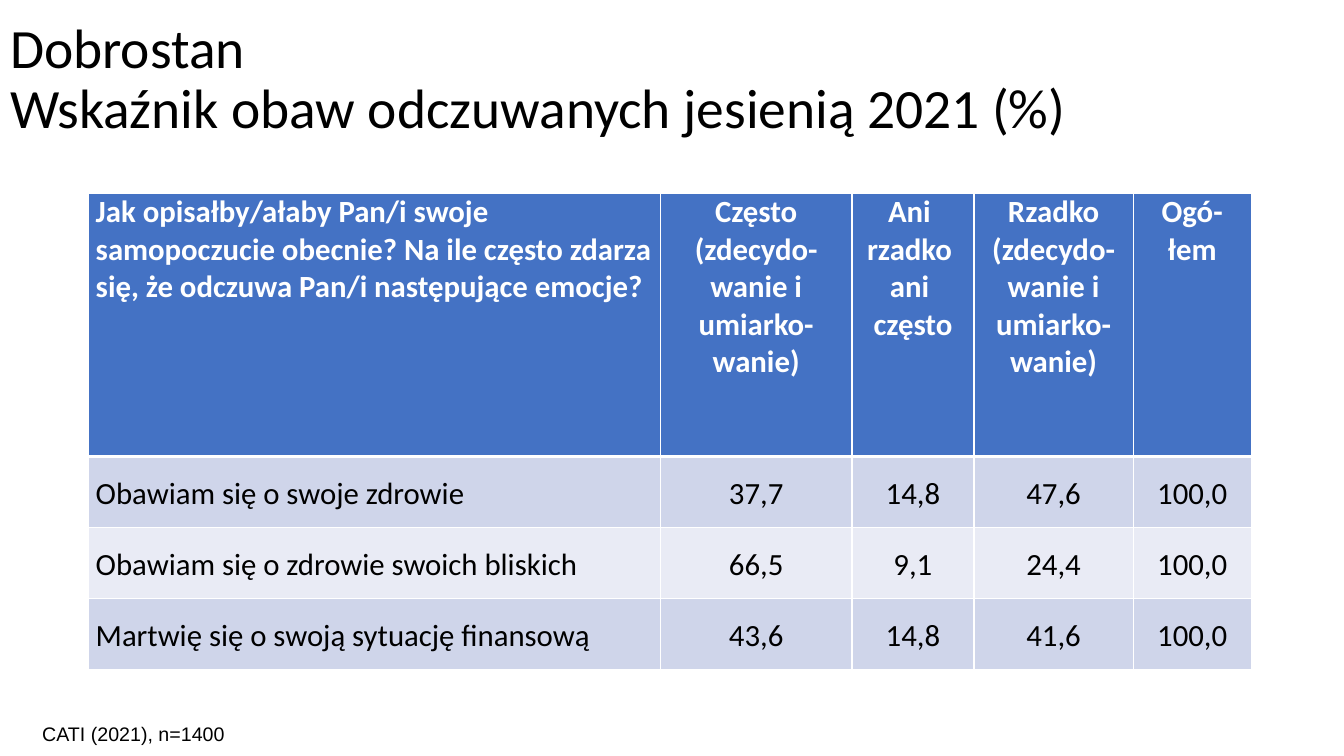
from dataclasses import dataclass

from lxml import etree
from pptx import Presentation
from pptx import util as u
from pptx.dml.color import RGBColor
from pptx.enum import text as t
from pptx.oxml import ns

PX = 9144  # EMU in one px, 100 px to the inch

BLACK = RGBColor(0, 0, 0)
WHITE = RGBColor(255, 255, 255)
BLUE = RGBColor(0x44, 0x72, 0xC4)
BANDS = RGBColor(0xCF, 0xD5, 0xEA), RGBColor(0xE9, 0xEB, 0xF5)

LEFT, MID = t.PP_ALIGN.LEFT, t.PP_ALIGN.CENTER


@dataclass(frozen=True)
class Column:
    width: int
    head: str
    align: t.PP_ALIGN = MID


@dataclass(frozen=True)
class Row:
    height: int
    cells: tuple[str, ...]


COLUMNS = (
    Column(567, "Jak opisałby/ałaby Pan/i swoje samopoczucie obecnie? Na ile często "
                "zdarza się, że odczuwa Pan/i następujące emocje?", LEFT),
    Column(190, "Często (zdecydo-wanie i umiarko-wanie)"),
    Column(121, "Ani \nrzadko \nani \nczęsto"),
    Column(158, "Rzadko (zdecydo-\nwanie i umiarko-wanie)"),
    Column(117, "Ogó- łem"),
)
ROWS = (
    Row(70, ("Obawiam się o swoje zdrowie", "37,7", "14,8", "47,6", "100,0")),
    Row(71, ("Obawiam się o zdrowie swoich bliskich", "66,5", "9,1", "24,4", "100,0")),
    Row(70, ("Martwię się o swoją sytuację finansową", "43,6", "14,8", "41,6", "100,0")),
)
HEAD = 261


def px(*sizes: int) -> list[u.Emu]:
    return [u.Emu(size * PX) for size in sizes]


def write(frame, words: str, *, size: float, font: str = "Calibri",
          color: RGBColor = BLACK, bold: bool = False, align: t.PP_ALIGN = LEFT,
          lines: float = 1.0, gap: int = 0) -> None:
    frame.text = words
    for para in frame.paragraphs:
        para.alignment = align
        para.line_spacing = lines
        para.space_before = para.space_after = u.Pt(gap)
        for run in para.runs:
            run.font.name = font
            run.font.size = u.Pt(size)
            run.font.bold = bold
            run.font.color.rgb = color


def edge(cell, side: str, width: int) -> None:
    """Draw one white border, side being L, R, T or B."""
    line = etree.SubElement(cell._tc.get_or_add_tcPr(), ns.qn(f"a:ln{side}"),
                            w=str(u.Pt(width)))
    fill = etree.SubElement(line, ns.qn("a:solidFill"))
    etree.SubElement(fill, ns.qn("a:srgbClr"), val=str(WHITE))


def paint(cell, color: RGBColor, top: int, low: int) -> None:
    """Set margins, borders and fill; borders must come before the fill."""
    cell.margin_left, cell.margin_right, cell.margin_top, cell.margin_bottom = px(7, 7, 0, 0)
    for side, width in (("L", 1), ("R", 1), ("T", top), ("B", low)):
        edge(cell, side, width)
    cell.fill.solid()
    cell.fill.fore_color.rgb = color


def add_title(slide) -> None:
    title = slide.shapes.title
    title.left, title.top, title.width, title.height = px(0, 0, 1150, 160)
    frame = title.text_frame
    frame.word_wrap = True
    frame.auto_size = t.MSO_AUTO_SIZE.NONE
    frame.vertical_anchor = t.MSO_ANCHOR.MIDDLE
    write(frame, "Dobrostan \vWskaźnik obaw odczuwanych jesienią 2021 (%)",
          size=39.6, lines=0.9)


def add_grid(slide) -> None:
    wide = sum(col.width for col in COLUMNS)
    high = HEAD + sum(row.height for row in ROWS)
    grid = slide.shapes.add_table(len(ROWS) + 1, len(COLUMNS),
                                  *px(88, 192, wide, high)).table
    grid.rows[0].height, = px(HEAD)
    for x, col in enumerate(COLUMNS):
        grid.columns[x].width, = px(col.width)
        cell = grid.cell(0, x)
        paint(cell, BLUE, 1, 3)
        write(cell.text_frame, col.head, size=22, color=WHITE, bold=True,
              align=col.align, gap=12 if x == 0 else 0)
    for y, row in enumerate(ROWS, 1):
        grid.rows[y].height, = px(row.height)
        for x, (col, words) in enumerate(zip(COLUMNS, row.cells)):
            cell = grid.cell(y, x)
            paint(cell, BANDS[(y - 1) % 2], 3 if y == 1 else 1, 1)
            write(cell.text_frame, words, size=22, align=col.align, lines=1.5)


def add_note(slide) -> None:
    frame = slide.shapes.add_textbox(*px(32, 706, 500, 44)).text_frame
    frame.word_wrap = True
    frame.vertical_anchor = t.MSO_ANCHOR.MIDDLE
    write(frame, "CATI (2021), n=1400", size=14, font="Arial")


def main() -> None:
    deck = Presentation()
    deck.slide_width, deck.slide_height = px(1333, 750)
    slide = deck.slides.add_slide(deck.slide_layouts.get_by_name("Title Only"))
    add_title(slide)
    add_grid(slide)
    add_note(slide)
    deck.save("out.pptx")


if __name__ == "__main__":
    main()
